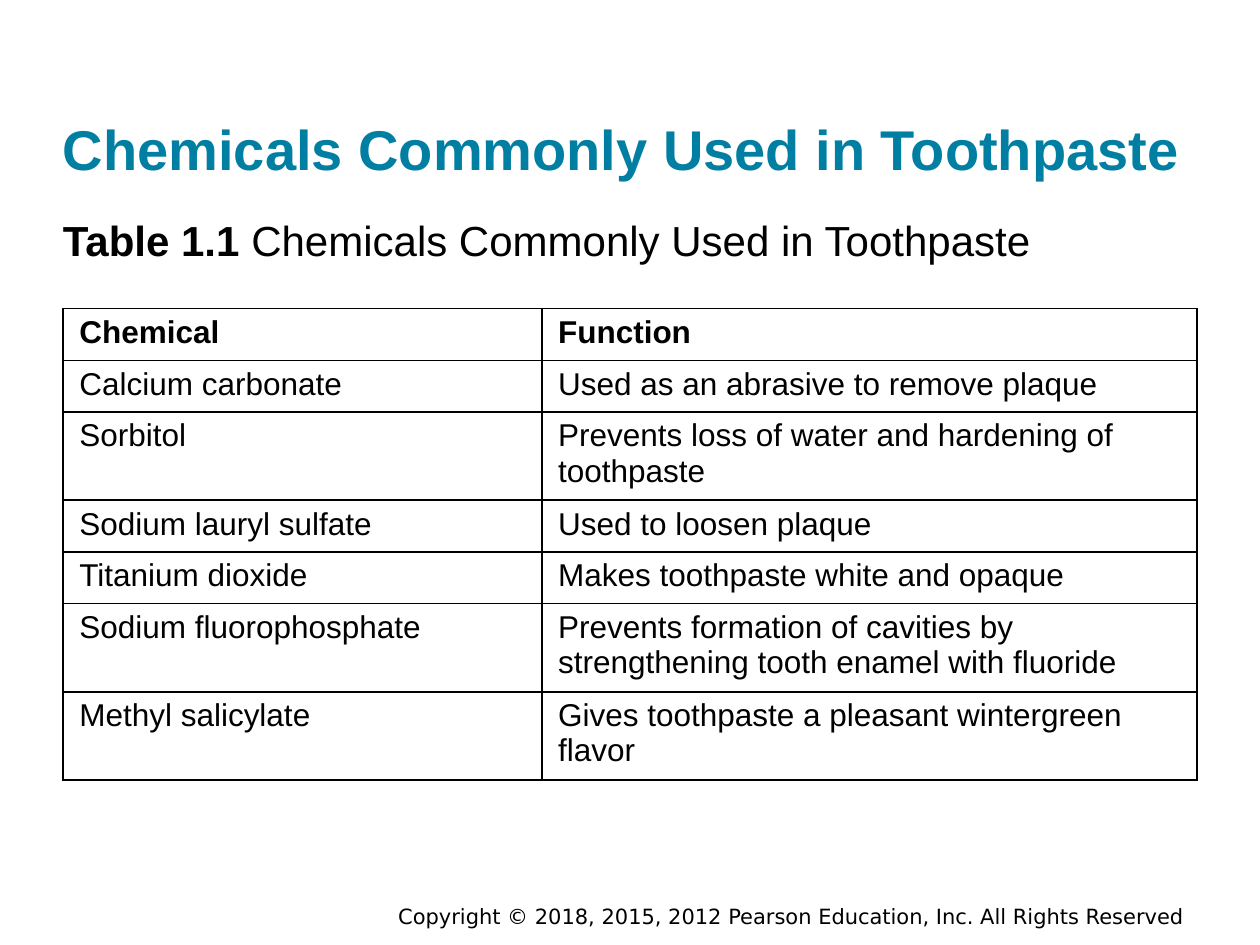
"""Build a slide with a table of chemicals commonly used in toothpaste."""
from pptx import Presentation
from pptx.dml.color import RGBColor
from pptx.enum.text import MSO_ANCHOR, PP_ALIGN
from pptx.oxml import parse_xml
from pptx.oxml.ns import nsdecls
from pptx.util import Inches, Pt

LEFT, RIGHT = PP_ALIGN.LEFT, PP_ALIGN.RIGHT
TOP, MIDDLE, BOTTOM = MSO_ANCHOR.TOP, MSO_ANCHOR.MIDDLE, MSO_ANCHOR.BOTTOM

TITLE = "Chemicals Commonly Used in Toothpaste"
CAPTION_LABEL = "Table 1.1 "
COPYRIGHT = "Copyright © 2018, 2015, 2012 Pearson Education, Inc. All Rights Reserved"
ROWS = [
    ("Chemical", "Function"),
    ("Calcium carbonate", "Used as an abrasive to remove plaque"),
    ("Sorbitol", "Prevents loss of water and hardening of toothpaste"),
    ("Sodium lauryl sulfate", "Used to loosen plaque"),
    ("Titanium dioxide", "Makes toothpaste white and opaque"),
    ("Sodium fluorophosphate",
     "Prevents formation of cavities by strengthening tooth enamel with fluoride"),
    ("Methyl salicylate", "Gives toothpaste a pleasant wintergreen flavor"),
]

THEME = {
    "title": {"name": "Arial", "size": Pt(32), "bold": True, "color": "007FA3"},
    "label": {"name": "Arial", "size": Pt(24), "bold": True, "color": "000000"},
    "caption": {"name": "Arial", "size": Pt(24), "bold": False, "color": "000000"},
    "header": {"name": "Arial", "size": Pt(18), "bold": True, "color": "000000"},
    "body": {"name": "Arial", "size": Pt(18), "bold": False, "color": "000000"},
    "copyright": {"name": "DejaVu Sans", "size": Pt(12), "bold": False, "color": "000000"},
    "border": "000000",
}

TABLE_LEFT, TABLE_TOP = 0.5, 2.45
COLUMN_WIDTHS = (3.8, 5.2)
ROW_HEIGHT = 0.41
CELL_FORMAT = {
    "margin_left": Inches(0.13), "margin_right": Inches(0.13),
    "margin_top": Inches(0.05), "margin_bottom": Inches(0.05),
    "vertical_anchor": TOP,
}


def set_attributes(target, values):
    for name, value in values.items():
        setattr(target, name, value)


def add_run(paragraph, text, style):
    run = paragraph.add_run()
    run.text = text
    values = dict(THEME[style])
    run.font.color.rgb = RGBColor.from_string(values.pop("color"))
    set_attributes(run.font, values)


def add_text(slide, box, runs, anchor=TOP, alignment=LEFT, margins=(0, 0)):
    shape = slide.shapes.add_textbox(*map(Inches, box))
    horizontal, vertical = map(Inches, margins)
    set_attributes(shape.text_frame, {
        "word_wrap": True, "vertical_anchor": anchor,
        "margin_left": horizontal, "margin_right": horizontal,
        "margin_top": vertical, "margin_bottom": vertical,
    })
    paragraph = shape.text_frame.paragraphs[0]
    paragraph.alignment = alignment
    for text, style in runs:
        add_run(paragraph, text, style)


def add_borders(cell):
    properties = cell._tc.get_or_add_tcPr()
    for side in ("lnL", "lnR", "lnT", "lnB"):
        properties.append(parse_xml(
            f'<a:{side} {nsdecls("a")} w="{Pt(1)}"><a:solidFill>'
            f'<a:srgbClr val="{THEME["border"]}"/></a:solidFill></a:{side}>'))


def add_chemical_table(slide):
    frame = slide.shapes.add_table(
        len(ROWS), len(COLUMN_WIDTHS), Inches(TABLE_LEFT), Inches(TABLE_TOP),
        Inches(sum(COLUMN_WIDTHS)), Inches(ROW_HEIGHT * len(ROWS)))
    table = frame.table
    table.horz_banding = False
    for column, width in zip(table.columns, COLUMN_WIDTHS):
        column.width = Inches(width)
    for row_index, (row, texts) in enumerate(zip(table.rows, ROWS)):
        row.height = Inches(ROW_HEIGHT)
        style = "body" if row_index else "header"
        for cell, text in zip(row.cells, texts):
            set_attributes(cell, CELL_FORMAT)
            add_borders(cell)
            cell.fill.background()
            add_run(cell.text_frame.paragraphs[0], text, style)


def main():
    presentation = Presentation()
    presentation.slide_width, presentation.slide_height = Inches(10), Inches(7.5)
    slide = presentation.slides.add_slide(presentation.slide_layouts[6])
    add_text(slide, (2.9, 7.04, 6.6, 0.46), [(COPYRIGHT, "copyright")],
             MIDDLE, RIGHT, (0.1, 0.05))
    add_text(slide, (0.5, 0.24, 9.13, 1.2), [(TITLE, "title")], BOTTOM)
    add_text(slide, (0.5, 1.7, 9, 0.49), [(CAPTION_LABEL, "label"), (TITLE, "caption")])
    add_chemical_table(slide)
    presentation.save("out.pptx")


if __name__ == "__main__":
    main()
